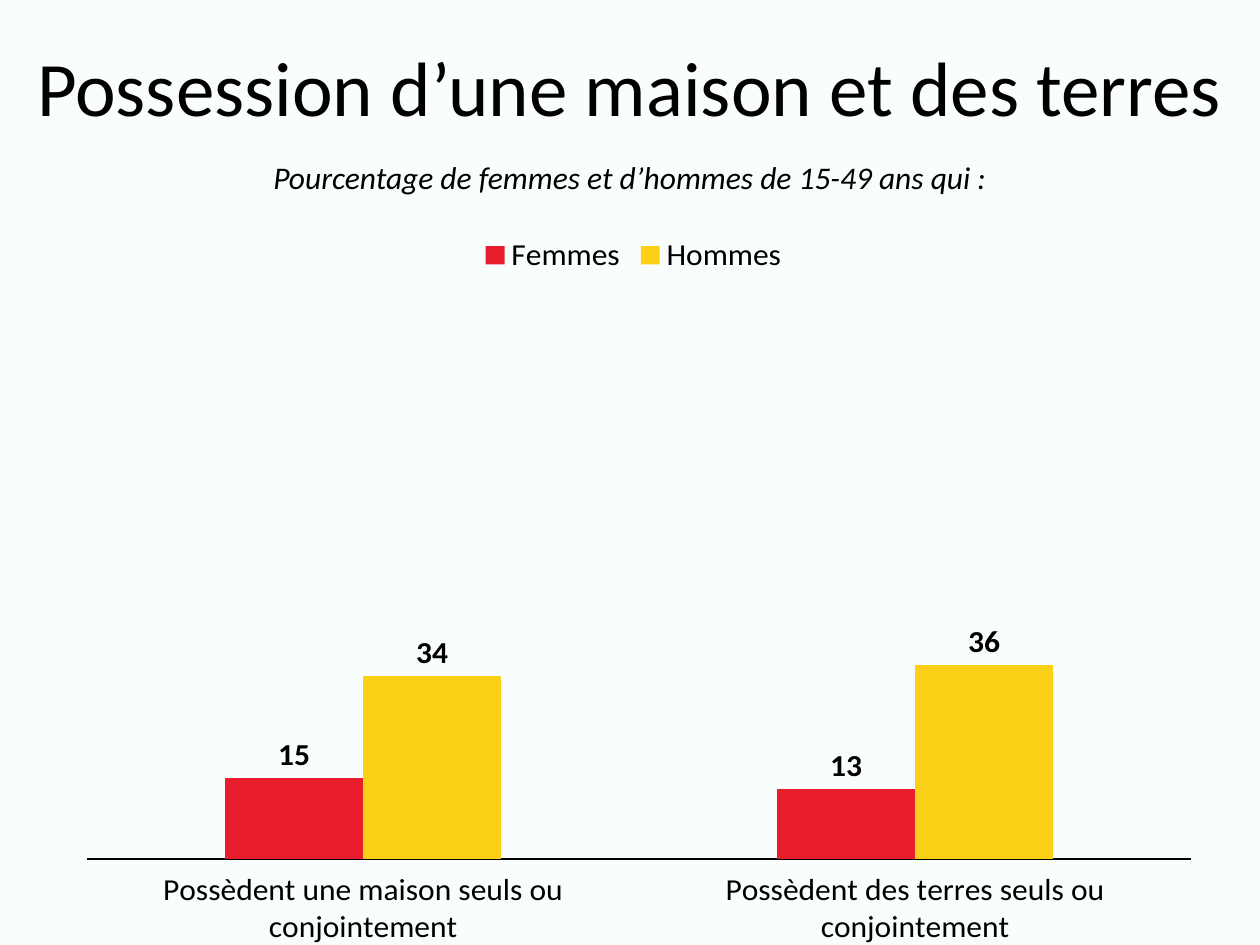
from dataclasses import dataclass
from lxml.etree import SubElement as Sub
from pptx import Presentation as Deck
from pptx.chart.data import CategoryChartData as Data
from pptx.dml.color import RGBColor as Rgb
from pptx.enum.chart import (XL_CHART_TYPE as Kind, XL_LABEL_POSITION as Spot,
                             XL_LEGEND_POSITION as Side, XL_TICK_MARK as Tick,
                             XL_TICK_LABEL_POSITION as Place)
from pptx.enum.text import MSO_ANCHOR as Anchor, PP_ALIGN as Align
from pptx.oxml import parse_xml
from pptx.oxml.ns import nsdecls, qn
from pptx.util import Cm, Pt


@dataclass(frozen=True)
class Theme:
    face: str = "Calibri"
    ink: str = "000000"
    back: str = "F9FEFC"
    women: str = "E81D2E"
    men: str = "FBD017"
    head: int = 44
    body: int = 18
    base: int = 10


def apply(item, **vals):
    for name, val in vals.items():
        setattr(item, name, val)


class Page:
    def __init__(self, deck, theme):
        self.theme = theme
        self.slide = deck.slides.add_slide(deck.slide_layouts[6])
        self.paint(self.slide.background.fill, theme.back)

    def paint(self, fill, color):
        fill.solid()
        fill.fore_color.rgb = Rgb.from_string(color)

    def style(self, font, size, **more):
        apply(font, name=self.theme.face, size=Pt(size), **more)
        font.color.rgb = Rgb.from_string(self.theme.ink)

    def text(self, words, box, size, space=1.0, anchor=Anchor.TOP, **more):
        frame = self.slide.shapes.add_textbox(*map(Cm, box)).text_frame
        apply(frame, word_wrap=True, vertical_anchor=anchor)
        para = frame.paragraphs[0]
        apply(para, alignment=Align.CENTER, line_spacing=space)
        run = para.add_run()
        run.text = words
        self.style(run.font, size, **more)

    def chart(self, cats, rows, box, top, plot):
        data = Data(number_format="0")
        data.categories = cats
        for name, vals, _ in rows:
            data.add_series(name, vals)
        chart = self.slide.shapes.add_chart(
            Kind.COLUMN_CLUSTERED, *map(Cm, box), data).chart
        apply(chart, has_title=False, has_legend=True)
        self.style(chart.font, self.theme.base)
        apply(chart.legend, position=Side.TOP, include_in_layout=False)
        self.style(chart.legend.font, self.theme.body)
        self.axes(chart, top)
        bars = chart.plots[0]
        apply(bars, gap_width=200, overlap=0, vary_by_categories=False)
        for bar, (_, _, color) in zip(bars.series, rows):
            self.paint(bar.format.fill, color)
            tags = bar.data_labels
            apply(tags, show_value=True, position=Spot.OUTSIDE_END)
            self.style(tags.font, self.theme.body, bold=True)
        self.place(chart, plot)

    def axes(self, chart, top):
        apply(chart.value_axis, minimum_scale=0, maximum_scale=top,
              has_major_gridlines=False, visible=False)
        axis = chart.category_axis
        apply(axis, major_tick_mark=Tick.NONE, minor_tick_mark=Tick.NONE,
              tick_label_position=Place.LOW)
        self.style(axis.tick_labels.font, self.theme.body)
        line = axis.format.line
        line.width = Pt(0.75)
        self.paint(line.fill, self.theme.ink)

    def place(self, chart, plot):
        root = chart.element
        area = root.find(".//" + qn("c:plotArea"))
        for old in area.findall(qn("c:layout")):
            area.remove(old)
        frame = parse_xml(f"<c:layout {nsdecls('c')}><c:manualLayout/></c:layout>")
        parts = dict(layoutTarget="inner", xMode="edge", yMode="edge")
        parts.update(zip("xywh", plot))
        for tag, val in parts.items():
            Sub(frame[0], qn("c:" + tag), val=str(val))
        area.insert(0, frame)
        clear = (f"<c:spPr {nsdecls('c', 'a')}><a:noFill/>"
                 "<a:ln><a:noFill/></a:ln></c:spPr>")
        area.append(parse_xml(clear))
        root.find(qn("c:chart")).addnext(parse_xml(clear))


def main():
    deck = Deck()
    apply(deck, slide_width=Cm(25.4), slide_height=Cm(19.05))
    theme = Theme()
    page = Page(deck, theme)
    page.text("Possession d’une maison et des terres", (0, 0, 25.4, 3.68),
              theme.head, space=0.9, anchor=Anchor.MIDDLE)
    page.chart(
        ["Possèdent une maison seuls ou conjointement",
         "Possèdent des terres seuls ou conjointement"],
        [("Femmes", (15, 13), theme.women), ("Hommes", (34, 36), theme.men)],
        box=(1.3, 4.47, 22.94, 14.58), top=100, plot=(0.02, 0.14, 0.97, 0.77))
    page.text("Pourcentage de femmes et d’hommes de 15-49 ans qui :",
              (0, 3.07, 25.4, 1.02), theme.body, italic=True)
    deck.save("out.pptx")


if __name__ == "__main__":
    main()
